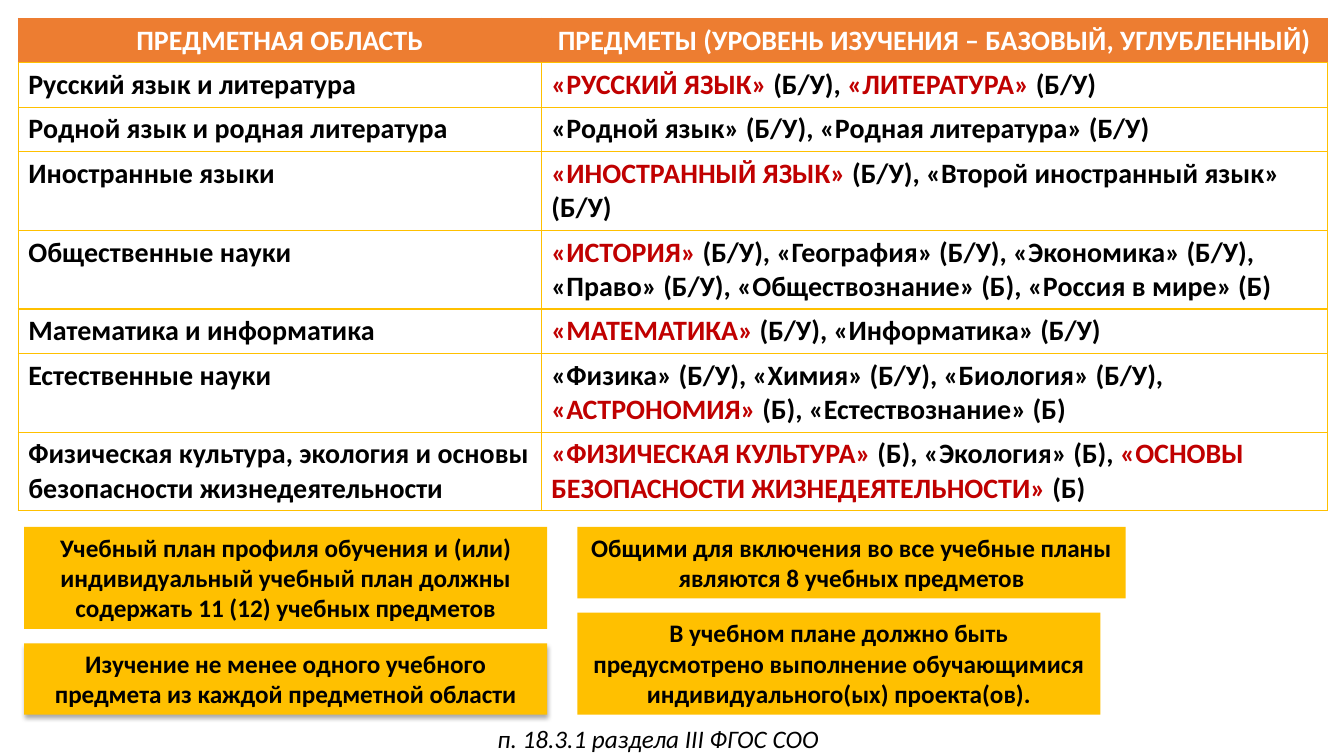
from lxml import etree
from pptx import Presentation
from pptx.dml.color import RGBColor
from pptx.enum.shapes import MSO_SHAPE
from pptx.enum.text import MSO_ANCHOR, MSO_AUTO_SIZE, PP_ALIGN
from pptx.oxml.ns import qn
from pptx.util import Cm, Pt

CENTER, LEFT = PP_ALIGN.CENTER, PP_ALIGN.LEFT
MIDDLE, TOP = MSO_ANCHOR.MIDDLE, MSO_ANCHOR.TOP
GROW = MSO_AUTO_SIZE.SHAPE_TO_FIT_TEXT
RECTANGLE = MSO_SHAPE.RECTANGLE

COLORS = {"header": "ED7D31", "gold": "FFC000", "required": "C00000",
          "text": "000000", "light": "FFFFFF"}
TABLE_FONT = {"name": "Calibri", "size": Pt(20), "bold": True}
NOTE_FONT = {"name": "Calibri", "size": Pt(18), "bold": True}
SOURCE_FONT = {"name": "Calibri", "size": Pt(18), "italic": True}
NOTE_FRAME = {"word_wrap": True, "auto_size": GROW, "vertical_anchor": TOP}
SOURCE_FRAME = {"word_wrap": True, "vertical_anchor": MIDDLE}

SINGLE, DOUBLE = 1.12, 1.98
HEADINGS = ("ПРЕДМЕТНАЯ ОБЛАСТЬ",
            "ПРЕДМЕТЫ (УРОВЕНЬ ИЗУЧЕНИЯ – БАЗОВЫЙ, УГЛУБЛЕННЫЙ)")
SUBJECT_AREAS = [
    (SINGLE, "Русский язык и литература",
     "|«РУССКИЙ ЯЗЫК» |(Б/У), |«ЛИТЕРАТУРА» |(Б/У)"),
    (SINGLE, "Родной язык и родная литература",
     "«Родной язык» (Б/У), «Родная литература» (Б/У)"),
    (DOUBLE, "Иностранные языки",
     "|«ИНОСТРАННЫЙ ЯЗЫК» |(Б/У), «Второй иностранный язык» (Б/У)"),
    (DOUBLE, "Общественные науки",
     "|«ИСТОРИЯ» |(Б/У), «География» (Б/У), «Экономика» (Б/У), "
     "«Право» (Б/У), «Обществознание» (Б), «Россия в мире» (Б)"),
    (SINGLE, "Математика и информатика",
     "|«МАТЕМАТИКА» |(Б/У), «Информатика» (Б/У)"),
    (DOUBLE, "Естественные науки",
     "«Физика» (Б/У), «Химия» (Б/У), «Биология» (Б/У),\n"
     "|«АСТРОНОМИЯ» |(Б), «Естествознание» (Б)"),
    (DOUBLE, "Физическая культура, экология и основы безопасности жизнедеятельности",
     "|«ФИЗИЧЕСКАЯ КУЛЬТУРА» |(Б), «Экология» (Б), "
     "|«ОСНОВЫ БЕЗОПАСНОСТИ ЖИЗНЕДЕЯТЕЛЬНОСТИ»| (Б)"),
]
PLAN_NOTES = [
    (13.18, 2.57, "Учебный план профиля обучения и (или) индивидуальный учебный "
                  "план должны содержать 11 (12) учебных предметов", False),
    (13.18, 1.8, "Изучение не менее одного учебного предмета из каждой "
                 "предметной области", True),
]
COMMON_NOTES = [
    (13.82, 1.8, "Общими для включения во все учебные планы являются "
                 "8 учебных предметов", False),
    (13.18, 2.57, "В учебном плане должно быть предусмотрено выполнение "
                  "обучающимися индивидуального(ых) проекта(ов).", False),
]


def rgb(color):
    """Return the palette colour of the given name."""
    return RGBColor.from_string(COLORS[color])


def apply(target, formats):
    """Set every attribute of a format dict on the target."""
    for attribute, value in formats.items():
        setattr(target, attribute, value)


def write(frame, text, font, color="text", align=CENTER):
    """Fill a text frame, with the pieces between bars in the required colour."""
    for number, line in enumerate(text.split("\n")):
        paragraph = frame.add_paragraph() if number else frame.paragraphs[0]
        paragraph.alignment = align
        for position, piece in enumerate(line.split("|")):
            if piece:
                run = paragraph.add_run()
                run.text = piece
                apply(run.font, font)
                run.font.color.rgb = rgb("required" if position % 2 else color)


def border(cell, side, color, width):
    """Draw one side of a table cell."""
    line = etree.SubElement(cell._tc.get_or_add_tcPr(), qn(f"a:ln{side}"), w=str(Pt(width)))
    fill = etree.SubElement(line, qn("a:solidFill"))
    etree.SubElement(fill, qn("a:srgbClr"), val=COLORS[color])


def subject_table(slide, left, top, widths):
    """Place the table of subject areas and their subjects."""
    rows = [(SINGLE, *HEADINGS), *SUBJECT_AREAS]
    height = sum(row[0] for row in rows)
    table = slide.shapes.add_table(len(rows), len(widths), Cm(left), Cm(top),
                                   Cm(sum(widths)), Cm(height)).table
    table.horz_banding = False
    for column, width in zip(table.columns, widths):
        column.width = Cm(width)
    for index, (row_height, *texts) in enumerate(rows):
        heading = index == 0
        table.rows[index].height = Cm(row_height)
        for cell, text in zip(table.rows[index].cells, texts):
            for side in "LRTB":
                edge = ("header", 0.5) if heading and side != "B" else ("gold", 1)
                border(cell, side, *edge)
            if heading:
                cell.fill.solid()
                cell.fill.fore_color.rgb = rgb("header")
            else:
                cell.fill.background()
            write(cell.text_frame, text, TABLE_FONT, "light" if heading else "text",
                  CENTER if heading else LEFT)


def drop_shadow(shape):
    """Give a shape a soft shadow below it."""
    effects = shape._element.spPr.find(qn("a:effectLst"))
    shadow = etree.SubElement(effects, qn("a:outerShdw"), blurRad=str(Pt(3.5)),
                              dist=str(Pt(2.2)), dir="5400000", rotWithShape="0")
    color = etree.SubElement(shadow, qn("a:srgbClr"), val=COLORS["text"])
    etree.SubElement(color, qn("a:alpha"), val="32000")


def note_stack(slide, left, top, notes, gap=0.36):
    """Stack gold notes downwards with equal gaps."""
    for width, height, text, raised in notes:
        note = slide.shapes.add_shape(RECTANGLE, Cm(left), Cm(top), Cm(width), Cm(height))
        note.shadow.inherit = False
        note.fill.solid()
        note.fill.fore_color.rgb = rgb("gold")
        note.line.fill.background()
        apply(note.text_frame, NOTE_FRAME)
        write(note.text_frame, text, NOTE_FONT)
        if raised:
            drop_shadow(note)
        top += height + gap


def source_line(slide, left, top, width, height):
    """Place the reference to the standard."""
    reference = slide.shapes.add_textbox(Cm(left), Cm(top), Cm(width), Cm(height))
    apply(reference.text_frame, SOURCE_FRAME)
    write(reference.text_frame, "п. 18.3.1 раздела III ФГОС СОО", SOURCE_FONT)


def main():
    """Build the slide and save it."""
    deck = Presentation()
    deck.slide_width, deck.slide_height = Cm(33.87), Cm(19.05)
    slide = deck.slides.add_slide(deck.slide_layouts[6])
    subject_table(slide, 0.46, 0.46, (13.18, 19.81))
    note_stack(slide, 0.61, 13.28, PLAN_NOTES)
    note_stack(slide, 14.55, 13.28, COMMON_NOTES)
    source_line(slide, 11.84, 17.7, 9.5, 1.8)
    deck.save("out.pptx")


if __name__ == "__main__":
    main()
